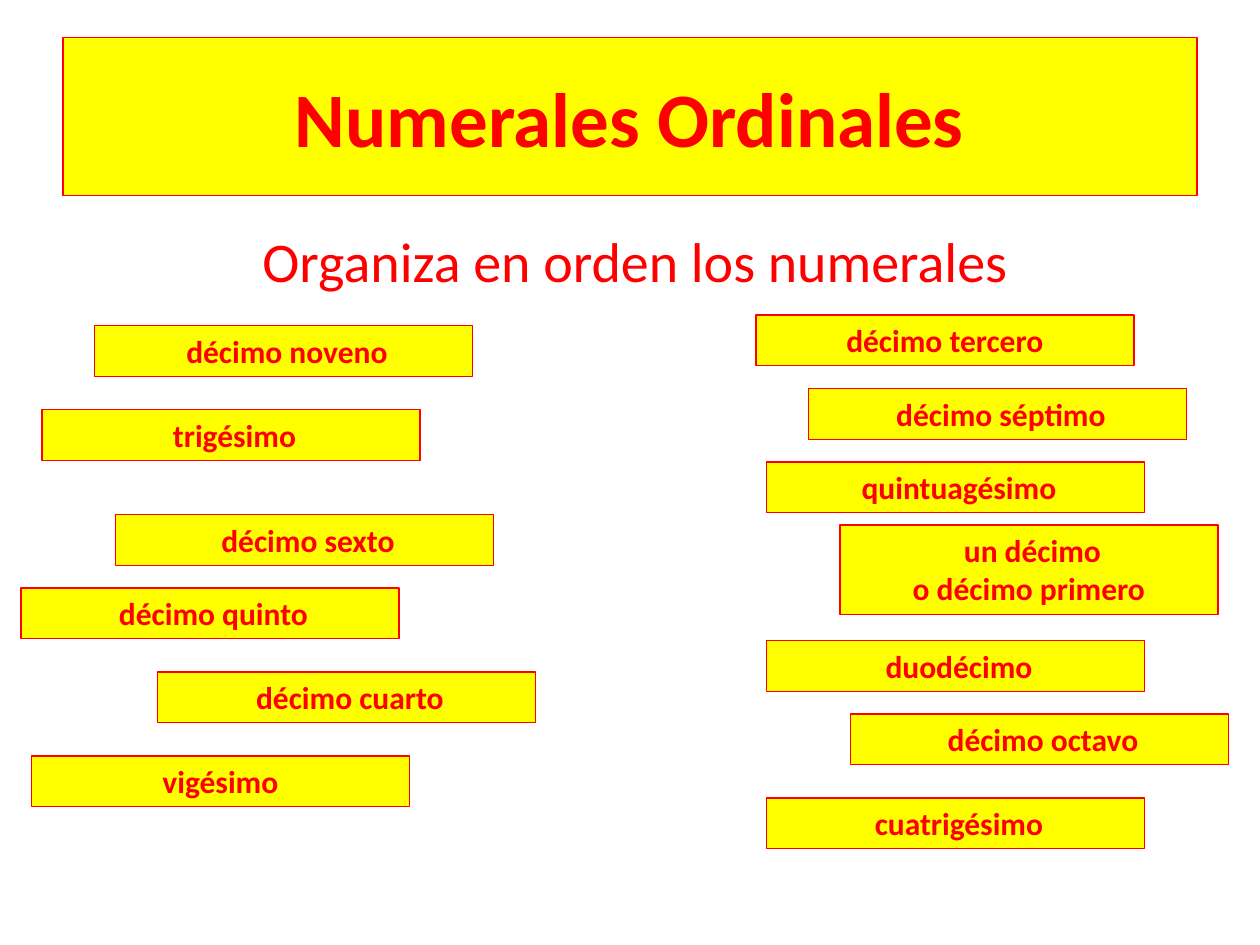
import pptx
import pptx.util
from pptx.dml.color import RGBColor
from pptx.enum.shapes import MSO_SHAPE
from pptx.enum.text import MSO_ANCHOR, MSO_AUTO_SIZE, PP_ALIGN

Pt = pptx.util.Pt
COLORS = {"ink": "FF0000", "card": "FFFF00"}
FONT = "Calibri"
CARD_WIDTH = 216
LINE_HEIGHT = 22
CARD_PADDING = 7

# Left, top and lines of each ordinal, in points
ORDINALS = [
    # Left side
    (54, 186, [" décimo noveno"]),
    (24, 234, [" trigésimo"]),
    (66, 294, [" décimo sexto"]),
    (12, 336, [" décimo quinto"]),
    (90, 384, [" décimo cuarto"]),
    (18, 432, ["vigésimo"]),
    # Right side
    (432, 180, [" décimo tercero "]),
    (462, 222, [" décimo séptimo"]),
    (438, 264, [" quintuagésimo"]),
    (480, 300, [" un décimo", "o décimo primero"]),
    (438, 366, [" duodécimo"]),
    (486, 408, [" décimo octavo"]),
    (438, 456, [" cuatrigésimo"]),
]


def color(name):
    return RGBColor.from_string(COLORS[name])


def write_lines(frame, lines, size, bold):
    frame.word_wrap = True
    for index, line in enumerate(lines):
        paragraph = frame.paragraphs[0] if index == 0 else frame.add_paragraph()
        paragraph.alignment = PP_ALIGN.CENTER
        run = paragraph.add_run()
        run.text = line
        run.font.name = FONT
        run.font.size = Pt(size)
        run.font.bold = bold
        run.font.color.rgb = color("ink")


def add_card(slide, left, top, width, height, lines, size):
    card = slide.shapes.add_shape(
        MSO_SHAPE.RECTANGLE, Pt(left), Pt(top), Pt(width), Pt(height))
    card.shadow.inherit = False
    card.fill.solid()
    card.fill.fore_color.rgb = color("card")
    card.line.color.rgb = color("ink")
    card.line.width = Pt(0.75)
    write_lines(card.text_frame, lines, size, True)
    return card


def add_ordinal(slide, left, top, lines):
    height = CARD_PADDING + LINE_HEIGHT * len(lines)
    ordinal = add_card(slide, left, top, CARD_WIDTH, height, lines, 18)
    ordinal.text_frame.vertical_anchor = MSO_ANCHOR.TOP
    ordinal.text_frame.auto_size = MSO_AUTO_SIZE.SHAPE_TO_FIT_TEXT


def add_instruction(slide):
    instruction = slide.shapes.add_textbox(Pt(36), Pt(126), Pt(654), Pt(60))
    write_lines(instruction.text_frame, ["Organiza en orden los numerales"], 32, False)


def main():
    deck = pptx.Presentation()
    deck.slide_width, deck.slide_height = Pt(720), Pt(540)
    slide = deck.slides.add_slide(deck.slide_layouts[6])

    # Heading
    add_instruction(slide)
    title = add_card(slide, 36, 21.6, 648, 90, ["Numerales Ordinales"], 44)
    title.text_frame.vertical_anchor = MSO_ANCHOR.MIDDLE

    # Scattered ordinals to put in order
    for left, top, lines in ORDINALS:
        add_ordinal(slide, left, top, lines)

    deck.save("out.pptx")


if __name__ == "__main__":
    main()
